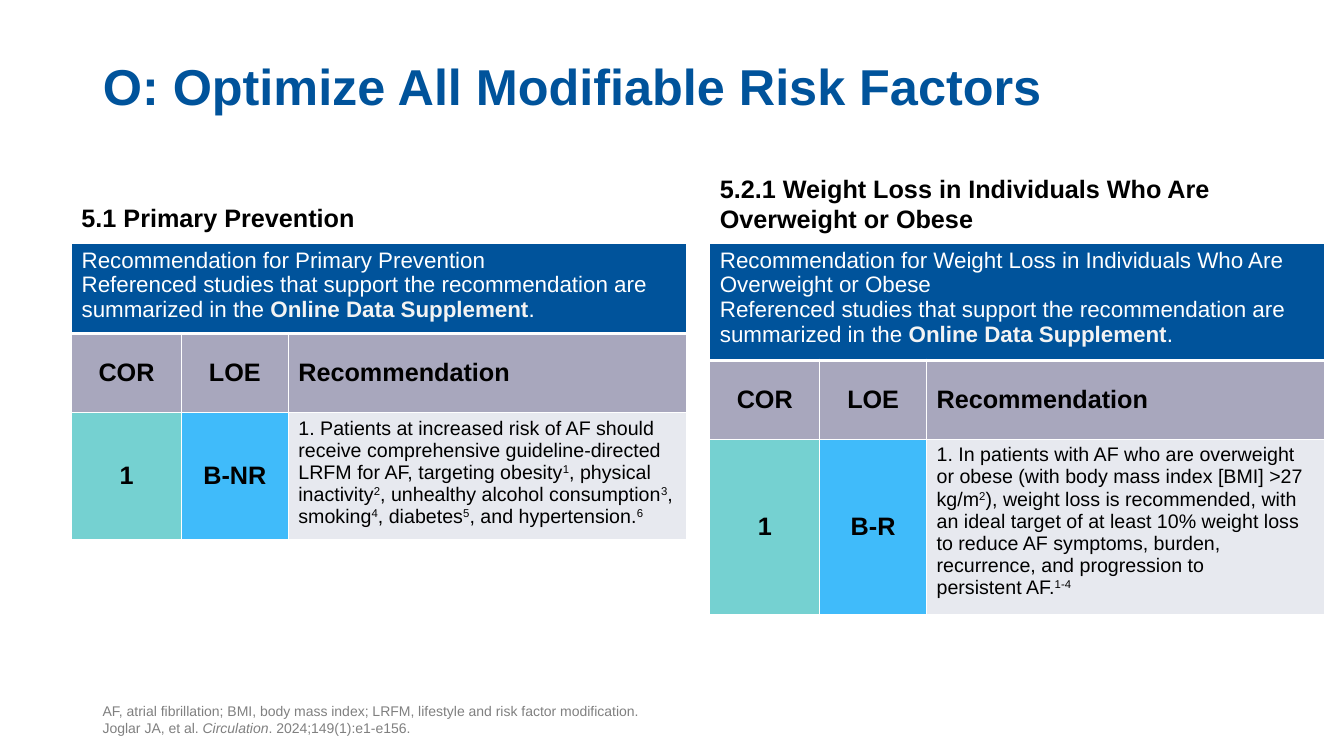
from dataclasses import dataclass
from typing import NamedTuple

from lxml import etree
from pptx import Presentation
from pptx.dml.color import RGBColor
from pptx.enum.text import MSO_ANCHOR, MSO_AUTO_SIZE, PP_ALIGN
from pptx.oxml.ns import qn
from pptx.util import Inches, Pt

TOP, MIDDLE, BOTTOM = MSO_ANCHOR.TOP, MSO_ANCHOR.MIDDLE, MSO_ANCHOR.BOTTOM
LEFT, CENTER = PP_ALIGN.LEFT, PP_ALIGN.CENTER
FONT = "Arial"
COLORS = {
    "blue": "00539B", "white": "FFFFFF", "black": "000000", "gray": "808080",
    "off_white": "F3F3F3", "heading": "A8A7BD", "class": "75D1D1",
    "evidence": "40BBFA", "body": "E7E9EF",
}
COLUMN_WIDTHS = (1.09, 1.06, 3.95)
TABLE_TOP = 2.41


class Run(NamedTuple):
    text: str
    bold: bool = False
    italic: bool = False
    raised: bool = False
    color: str = ""


@dataclass
class Panel:
    left: float
    caption: list
    caption_box: tuple  # top, width, height
    subject: str
    evidence: str
    recommendation: str  # superscripts stand between carets
    row_heights: tuple


PANELS = [
    Panel(0.71, ["5.1 Primary Prevention"], (1.96, 2.94, 0.4),
          "Primary Prevention", "B-NR",
          "1. Patients at increased risk of AF should receive comprehensive "
          "guideline-directed LRFM for AF, targeting obesity^1^, physical inactivity^2^, "
          "unhealthy alcohol consumption^3^, smoking^4^, diabetes^5^, and hypertension.^6^",
          (0.84, 0.78, 1.19)),
    Panel(7.04, ["5.2.1 Weight Loss in Individuals Who Are", "Overweight or Obese"],
          (1.67, 5.11, 0.71),
          "Weight Loss in Individuals Who Are Overweight or Obese", "B-R",
          "1. In patients with AF who are overweight or obese (with body mass index "
          "[BMI] >27 kg/m^2^), weight loss is recommended, with an ideal target of at "
          "least 10% weight loss to reduce AF symptoms, burden, recurrence, and "
          "progression to \npersistent AF.^1-4^",
          (1.16, 0.78, 1.74)),
]


def write_text(frame, paragraphs, *, size: float, color: str, bold: bool = False,
               align=LEFT, line_spacing: float = 1.0) -> None:
    """Write paragraphs, each a string or a list of runs."""
    for index, content in enumerate(paragraphs):
        paragraph = frame.paragraphs[0] if index == 0 else frame.add_paragraph()
        paragraph.alignment = align
        paragraph.line_spacing = line_spacing
        paragraph.space_before = Pt(0)
        runs = [Run(content, bold)] if isinstance(content, str) else content
        for part in runs:
            for number, line in enumerate(part.text.split("\n")):
                if number:
                    paragraph.add_line_break()
                run = paragraph.add_run()
                run.text = line
                font = run.font
                font.name, font.size = FONT, Pt(size)
                font.bold, font.italic = part.bold, part.italic
                font.color.rgb = RGBColor.from_string(COLORS[part.color or color])
                if part.raised:
                    run._r.get_or_add_rPr().set("baseline", "30000")


def add_text_box(slide, box: tuple, paragraphs, *, wrap: bool, anchor=TOP, **text_format) -> None:
    shape = slide.shapes.add_textbox(*(Inches(value) for value in box))
    frame = shape.text_frame
    frame.word_wrap = wrap
    frame.vertical_anchor = anchor
    write_text(frame, paragraphs, **text_format)


def set_borders(cell, top: float, bottom: float) -> None:
    properties = cell._tc.get_or_add_tcPr()
    widths = {"lnL": 1, "lnR": 1, "lnT": top, "lnB": bottom}
    for position, (side, width) in enumerate(widths.items()):
        line = etree.Element(qn(f"a:{side}"), w=str(Pt(width)))
        fill = etree.SubElement(line, qn("a:solidFill"))
        etree.SubElement(fill, qn("a:srgbClr"), val=COLORS["white"])
        properties.insert(position, line)


def fill_cell(cell, paragraphs, *, fill: str, anchor=MIDDLE, **text_format) -> None:
    cell.fill.solid()
    cell.fill.fore_color.rgb = RGBColor.from_string(COLORS[fill])
    cell.vertical_anchor = anchor
    write_text(cell.text_frame, paragraphs, **text_format)


def add_panel(slide, panel: Panel) -> None:
    # Caption
    top, width, height = panel.caption_box
    add_text_box(slide, (panel.left, top, width, height), panel.caption,
                 wrap=False, size=18, color="black", bold=True)

    # Table grid
    table = slide.shapes.add_table(
        3, 3, Inches(panel.left), Inches(TABLE_TOP),
        Inches(sum(COLUMN_WIDTHS)), Inches(sum(panel.row_heights))).table
    for column, column_width in zip(table.columns, COLUMN_WIDTHS):
        column.width = Inches(column_width)
    for row, row_height in zip(table.rows, panel.row_heights):
        row.height = Inches(row_height)

    # Banner across all columns
    table.cell(0, 0).merge(table.cell(0, 2))
    banner = [
        f"Recommendation for {panel.subject}",
        [Run("Referenced studies that support the recommendation are summarized in the "),
         Run("Online Data Supplement", bold=True, color="off_white"), Run(".")],
    ]
    fill_cell(table.cell(0, 0), banner, fill="blue", anchor=TOP, size=16, color="white")

    # Column headings and grades
    labels = [
        (1, 0, "COR", "heading", CENTER), (1, 1, "LOE", "heading", CENTER),
        (1, 2, "Recommendation", "heading", LEFT),
        (2, 0, "1", "class", CENTER), (2, 1, panel.evidence, "evidence", CENTER),
    ]
    for row_index, column_index, label, fill, align in labels:
        fill_cell(table.cell(row_index, column_index), [label], fill=fill,
                  size=18, color="black", bold=True, align=align)

    # Recommendation text
    runs = [Run(text, raised=index % 2 == 1)
            for index, text in enumerate(panel.recommendation.split("^")) if text]
    fill_cell(table.cell(2, 2), [runs], fill="body", anchor=TOP, size=14, color="black")

    # White rules, thicker under the banner
    for row_index, (above, below) in enumerate([(1, 3), (3, 1), (1, 1)]):
        for column_index in range(3):
            set_borders(table.cell(row_index, column_index), above, below)


def main() -> None:
    presentation = Presentation()
    presentation.slide_width, presentation.slide_height = Inches(13.33), Inches(7.5)
    slide = presentation.slides.add_slide(presentation.slide_layouts[5])

    # Title
    title = slide.shapes.title
    title.left, title.top = Inches(0.92), Inches(0)
    title.width, title.height = Inches(11.5), Inches(1.21)
    title.text_frame.auto_size = MSO_AUTO_SIZE.NONE
    title.text_frame.vertical_anchor = BOTTOM
    write_text(title.text_frame, ["O: Optimize All Modifiable Risk Factors"],
               size=36, color="blue", bold=True, line_spacing=0.9)

    for panel in PANELS:
        add_panel(slide, panel)

    # Abbreviations and citation
    footnote = [
        Run("AF, atrial fibrillation; BMI, body mass index; LRFM, lifestyle and risk "
            "factor modification. \nJoglar JA, et al. "),
        Run("Circulation", italic=True), Run(". 2024;149(1):e1-e156."),
    ]
    add_text_box(slide, (0.92, 6.95, 11.5, 0.4), [footnote], wrap=True,
                 anchor=BOTTOM, size=10, color="gray")

    presentation.save("out.pptx")


if __name__ == "__main__":
    main()
